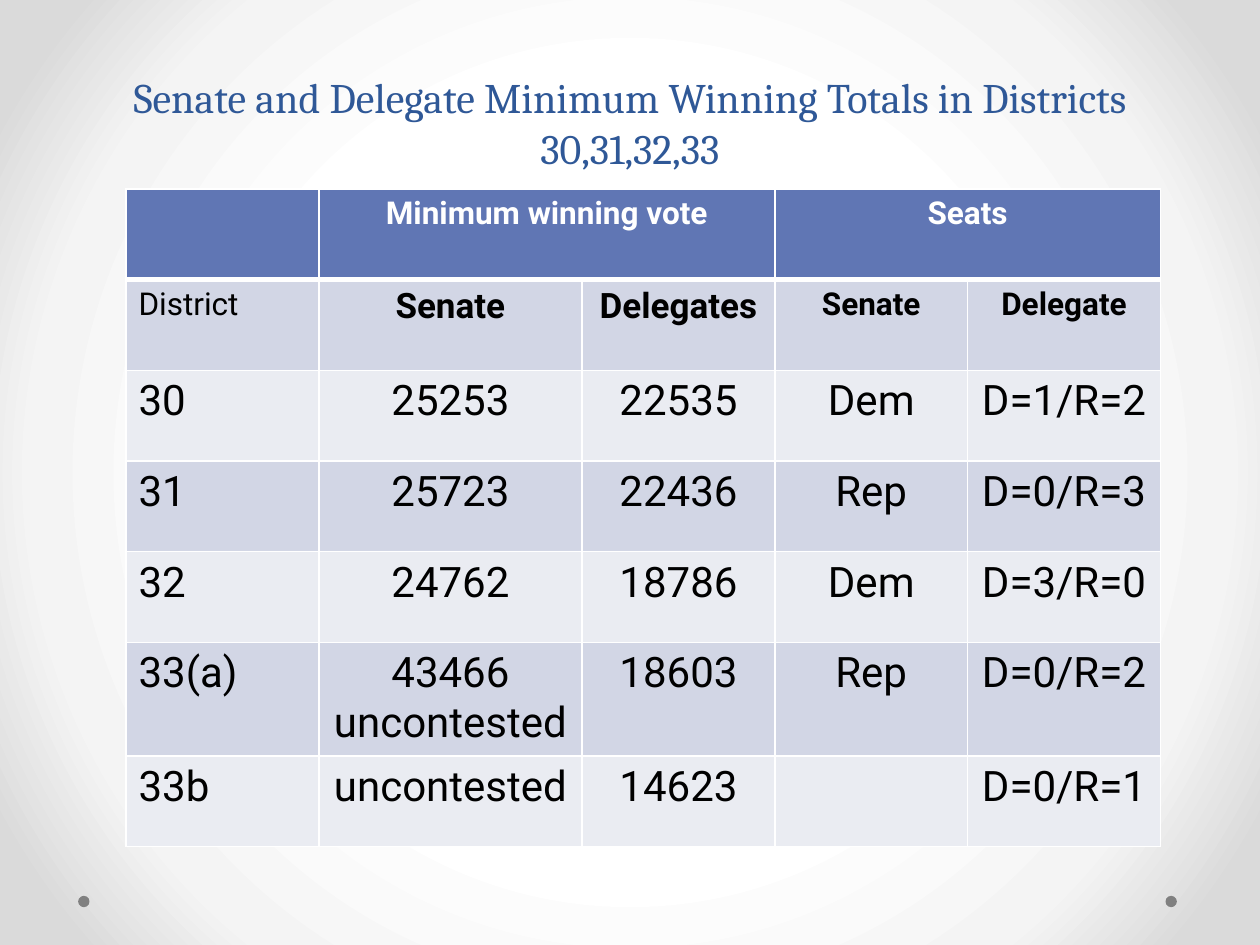
from pptx import Presentation
from pptx.dml.color import RGBColor
from pptx.enum.shapes import MSO_SHAPE as Shape
from pptx.enum.text import MSO_ANCHOR as Anchor, PP_ALIGN as Align
from pptx.oxml import parse_xml
from pptx.oxml.ns import nsdecls, qn
from pptx.util import Inches, Pt

TITLE = "Senate and Delegate Minimum Winning Totals in Districts 30,31,32,33"
ROWS = [
    ["", "Minimum winning vote", "", "Seats", ""],
    ["District", "Senate", "Delegates", "Senate", "Delegate"],
    ["30", "25253", "22535", "Dem", "D=1/R=2"],
    ["31", "25723", "22436", "Rep", "D=0/R=3"],
    ["32", "24762", "18786", "Dem", "D=3/R=0"],
    ["33(a)", "43466\vuncontested", "18603", "Rep", "D=0/R=2"],
    ["33b", "uncontested", "14623", "", "D=0/R=1"],
]
HEADER_SPANS = [(1, 2), (3, 4)]
COLUMN_WIDTHS = [1.53, 2.09, 1.53, 1.53, 1.53]
ROW_HEIGHT = 0.72
DOT_LEFTS = [0.62, 9.25]
THEME = {
    "background": [(50, "FFFFFF"), (76, "F4F4F4"), (92, "DADADA")],
    "header": "6076B4",
    "bands": ["EAECF2", "D2D6E5"],
    "border": "FFFFFF",
    "dot": "808080",
    "title": {"name": "Cambria", "size": 24, "color": "2F5897"},
    "heading": {"name": "Roboto", "size": 18, "color": "FFFFFF", "bold": True},
    "label": {"name": "Roboto", "size": 18, "color": "000000", "bold": False},
    "subhead": {"name": "Roboto", "size": 18, "color": "000000", "bold": True},
    "large_subhead": {"name": "Roboto", "size": 20, "color": "000000", "bold": True},
    "body": {"name": "Roboto", "size": 24, "color": "000000", "bold": False},
}


def write_text(frame, text, style, align):
    frame.text = text
    for para in frame.paragraphs:
        para.alignment = align
        for span in para.runs:
            for key, value in THEME[style].items():
                if key == "color":
                    span.font.color.rgb = RGBColor.from_string(value)
                else:
                    setattr(span.font, key, Pt(value) if key == "size" else value)


def paint(fill, color):
    fill.solid()
    fill.fore_color.rgb = RGBColor.from_string(color)


def paint_background(page):
    page.background.fill.gradient()
    gradient = page.element.find(".//" + qn("a:gradFill"))
    stops = "".join(
        f'<a:gs pos="{place * 1000}"><a:srgbClr val="{color}"/></a:gs>'
        for place, color in THEME["background"]
    )
    gradient.getparent().replace(gradient, parse_xml(
        f'<a:gradFill {nsdecls("a")} rotWithShape="1"><a:gsLst>{stops}</a:gsLst>'
        '<a:path path="circle"><a:fillToRect l="50000" t="50000" r="50000" b="50000"/>'
        '</a:path></a:gradFill>'
    ))


def add_borders(cell, row):
    widths = {"L": 1, "R": 1, "T": 3 if row == 1 else 1, "B": 3 if row == 0 else 1}
    properties = cell._tc.get_or_add_tcPr()
    for side, width in widths.items():
        properties.append(parse_xml(
            f'<a:ln{side} {nsdecls("a")} w="{Pt(width)}"><a:solidFill>'
            f'<a:srgbClr val="{THEME["border"]}"/></a:solidFill></a:ln{side}>'
        ))


def cell_style(row, column):
    if row == 0:
        return "heading"
    if row == 1:
        return ["label", "large_subhead", "large_subhead", "subhead", "subhead"][column]
    return "body"


def add_vote_table(page):
    table = page.shapes.add_table(
        len(ROWS), len(COLUMN_WIDTHS), Inches(1), Inches(1.5),
        Inches(sum(COLUMN_WIDTHS)), Inches(ROW_HEIGHT * len(ROWS)),
    ).table
    for column, width in zip(table.columns, COLUMN_WIDTHS):
        column.width = Inches(width)
    for row, values in enumerate(ROWS):
        table.rows[row].height = Inches(ROW_HEIGHT)
        for column, text in enumerate(values):
            cell = table.cell(row, column)
            align = Align.CENTER if column else Align.LEFT
            write_text(cell.text_frame, text, cell_style(row, column), align)
            add_borders(cell, row)
            paint(cell.fill, THEME["bands"][row % 2] if row else THEME["header"])
    for first, last in HEADER_SPANS:
        table.cell(0, first).merge(table.cell(0, last))


def main():
    """Build the slide of minimum winning totals by district."""
    deck = Presentation()
    deck.slide_width, deck.slide_height = Inches(10), Inches(7.5)
    page = deck.slides.add_slide(deck.slide_layouts[6])
    paint_background(page)
    for left in DOT_LEFTS:
        dot = page.shapes.add_shape(
            Shape.OVAL, Inches(left), Inches(7.11), Inches(0.09), Inches(0.09))
        dot.shadow.inherit = False
        paint(dot.fill, THEME["dot"])
        dot.line.fill.background()
    box = page.shapes.add_textbox(Inches(0.5), Inches(0.42), Inches(9), Inches(1))
    box.text_frame.word_wrap = True
    box.text_frame.vertical_anchor = Anchor.BOTTOM
    write_text(box.text_frame, TITLE, "title", Align.CENTER)
    add_vote_table(page)
    deck.save("out.pptx")


if __name__ == "__main__":
    main()
